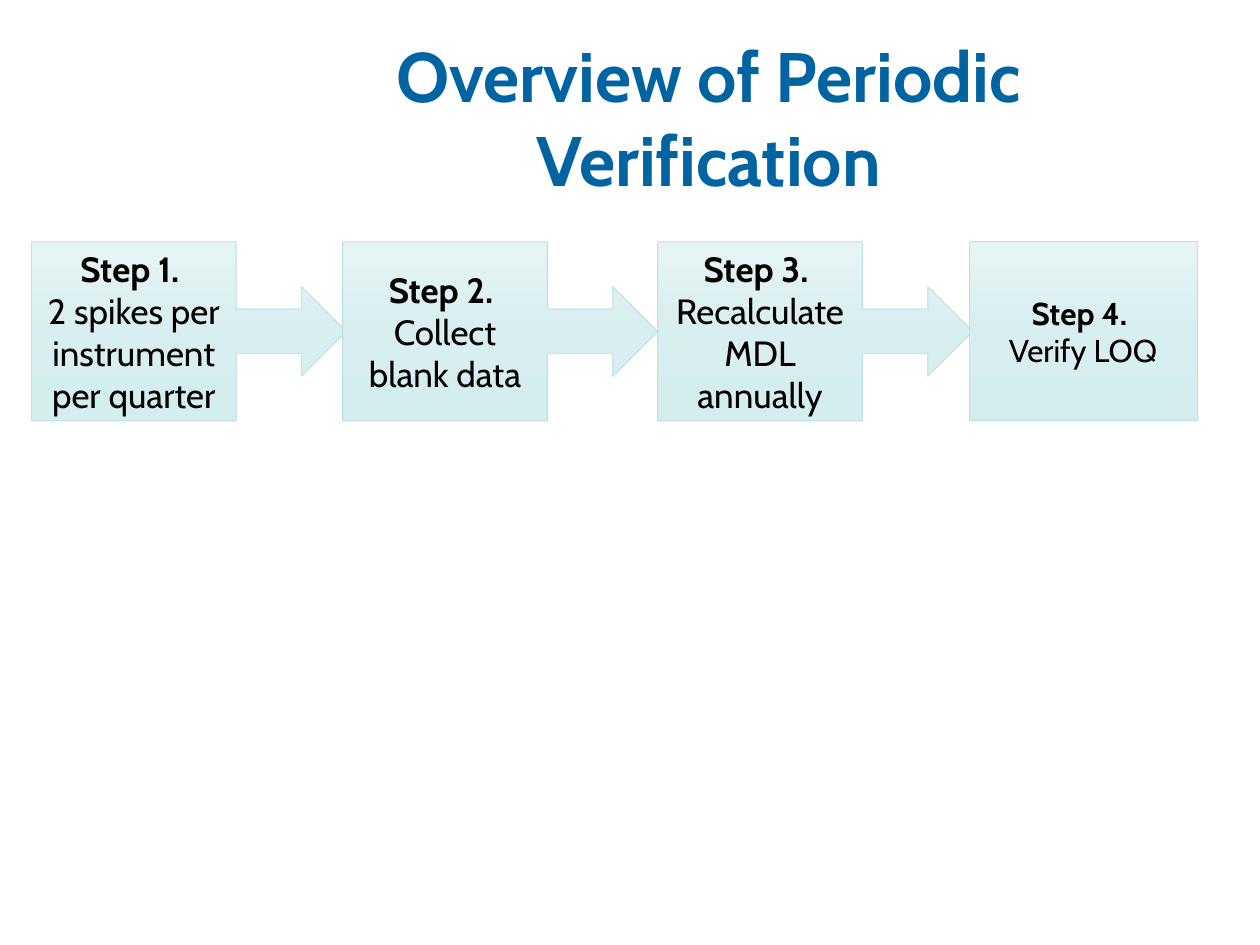
import copy

import pptx
import pptx.dml.color
import pptx.enum.shapes
import pptx.enum.text
import pptx.oxml.ns
import pptx.util

Inches = pptx.util.Inches
RGBColor = pptx.dml.color.RGBColor
Shapes = pptx.enum.shapes.MSO_SHAPE

TITLE_BLUE = RGBColor(0x00, 0x64, 0xA2)
BLACK = RGBColor(0x00, 0x00, 0x00)
BORDER = RGBColor(0xBB, 0xE0, 0xE3)
GRADIENT = (
    RGBColor(0xE6, 0xF4, 0xF5),
    RGBColor(0xD9, 0xEE, 0xF0),
    RGBColor(0xD4, 0xED, 0xEF),
)

STEP_TOP, STEP_HEIGHT = 1.92, 1.42
STEPS = (
    (Shapes.RIGHT_ARROW_CALLOUT, 0.25, 2.5, 20, "2 spikes per instrument per quarter"),
    (Shapes.RIGHT_ARROW_CALLOUT, 2.72, 2.5, 20, "Collect blank data"),
    (Shapes.RIGHT_ARROW_CALLOUT, 5.22, 2.5, 20, "Recalculate MDL annually"),
    (Shapes.RECTANGLE, 7.69, 1.81, 18, "Verify LOQ"),
)


class ProcessSlide:
    """Hold the style and the current slide, and add its elements."""

    font_name = "Cabin"

    def __init__(self, presentation):
        self.slide = presentation.slides.add_slide(presentation.slide_layouts[5])

    def format_paragraph(self, paragraph, size, color, bold):
        paragraph.alignment = pptx.enum.text.PP_ALIGN.CENTER
        for run in paragraph.runs:
            run.font.name = self.font_name
            run.font.size = pptx.util.Pt(size)
            run.font.bold = bold
            run.font.color.rgb = color

    def add_title(self, text, left, top, width, height):
        title = self.slide.shapes.title
        title.left, title.top = Inches(left), Inches(top)
        title.width, title.height = Inches(width), Inches(height)
        title.text_frame.text = text
        title.text_frame.vertical_anchor = pptx.enum.text.MSO_ANCHOR.MIDDLE
        self.format_paragraph(title.text_frame.paragraphs[0], 40, TITLE_BLUE, True)

    def fill_gradient(self, shape):
        shape.fill.gradient()
        shape.fill.gradient_angle = 270
        stop_list = shape.element.spPr.find(".//" + pptx.oxml.ns.qn("a:gsLst"))
        stop_list.insert(1, copy.deepcopy(stop_list[0]))
        for index, (stop, color) in enumerate(zip(shape.fill.gradient_stops, GRADIENT)):
            stop.position = index / (len(GRADIENT) - 1)
            stop.color.rgb = color

    def add_step(self, preset, left, width, size, heading, description):
        shape = self.slide.shapes.add_shape(
            preset, Inches(left), Inches(STEP_TOP), Inches(width), Inches(STEP_HEIGHT)
        )
        shape.shadow.inherit = False
        self.fill_gradient(shape)
        shape.line.color.rgb = BORDER
        shape.line.width = pptx.util.Pt(0.5)
        text_frame = shape.text_frame
        text_frame.word_wrap = True
        text_frame.vertical_anchor = pptx.enum.text.MSO_ANCHOR.MIDDLE
        text_frame.text = f"{heading}\n{description}"
        for paragraph, bold in zip(text_frame.paragraphs, (True, False)):
            self.format_paragraph(paragraph, size, BLACK, bold)


def main():
    presentation = pptx.Presentation()
    presentation.slide_width, presentation.slide_height = Inches(10), Inches(7.5)
    process = ProcessSlide(presentation)
    process.add_title("Overview of Periodic Verification", 1.75, 0.3, 7.75, 1.25)
    for number, (preset, left, width, size, description) in enumerate(STEPS, start=1):
        process.add_step(preset, left, width, size, f"Step {number}. ", description)
    presentation.save("out.pptx")


if __name__ == "__main__":
    main()
